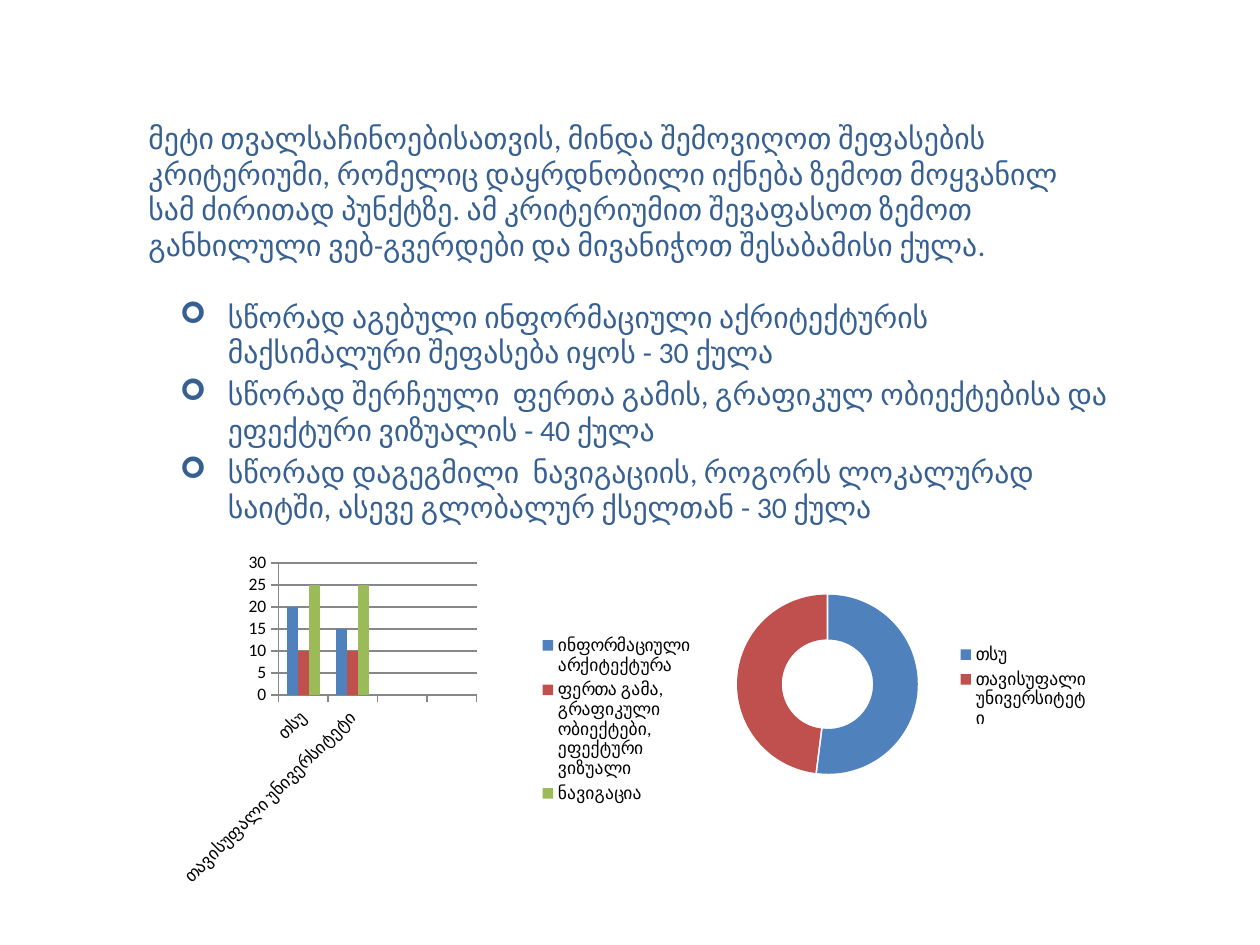
from lxml import etree
from pptx import Presentation
from pptx.chart.data import CategoryChartData
from pptx.dml.color import RGBColor
from pptx.enum.chart import XL_CHART_TYPE, XL_LEGEND_POSITION, XL_TICK_MARK
from pptx.oxml import parse_xml
from pptx.oxml.ns import nsdecls, qn
from pptx.util import Inches, Pt

COLUMN = XL_CHART_TYPE.COLUMN_CLUSTERED
DOUGHNUT = XL_CHART_TYPE.DOUGHNUT
RIGHT = XL_LEGEND_POSITION.RIGHT
OUTSIDE = XL_TICK_MARK.OUTSIDE

FONT = "Calibri"
TEXT = "376092"
AXIS = "878787"
BLUE, RED, GREEN = "4F81BD", "C0504D", "9BBB59"

INTRO = ["მეტი თვალსაჩინოებისათვის, მინდა შემოვიღოთ შეფასების კრიტერიუმი, რომელიც დაყრდნობილი იქნება ზემოთ მოყვანილ სამ ძირითად პუნქტზე. ამ კრიტერიუმით შევაფასოთ ზემოთ განხილული ვებ-გვერდები და მივანიჭოთ შესაბამისი ქულა."]
CRITERIA = [
    "სწორად აგებული ინფორმაციული აქრიტექტურის მაქსიმალური შეფასება იყოს - 30 ქულა",
    "სწორად შერჩეული  ფერთა გამის, გრაფიკულ ობიექტებისა და ეფექტური ვიზუალის - 40 ქულა",
    "სწორად დაგეგმილი  ნავიგაციის, როგორს ლოკალურად საიტში, ასევე გლობალურ ქსელთან - 30 ქულა",
]
UNIVERSITIES = ["თსუ", "თავისუფალი უნივერსიტეტი"]
SCORES = [
    ("ინფორმაციული არქიტექტურა", [20, 15], BLUE),
    ("ფერთა გამა, გრაფიკული ობიექტები, ეფექტური ვიზუალი", [10, 10], RED),
    ("ნავიგაცია", [25, 25], GREEN),
]


def rgb(value):
    return RGBColor.from_string(value)


def set_bullet(p, char, indent):
    pPr = p._p.get_or_add_pPr()
    pPr.set("marL", str(indent))
    pPr.set("indent", str(-indent))
    etree.SubElement(pPr, qn("a:buFont")).set("typeface", "Wingdings")
    etree.SubElement(pPr, qn("a:buChar")).set("char", char)


def add_text(slide, box, paragraphs, bullet=None):
    tf = slide.shapes.add_textbox(*map(Inches, box)).text_frame
    tf.word_wrap = True
    for i, text in enumerate(paragraphs):
        p = tf.paragraphs[0] if i == 0 else tf.add_paragraph()
        p.text = text
        if bullet:
            set_bullet(p, bullet, Inches(0.38))
        p.space_before = Pt(3.4 if i else 0)
        f = p.runs[0].font
        f.name, f.size = FONT, Pt(17)
        f.color.rgb = rgb(TEXT)


def set_plot_layout(chart, layout):
    area = chart._chartSpace.chart.plotArea
    for old in area.findall(qn("c:layout")):
        area.remove(old)
    sizes = "".join(f'<c:{k} val="{v}"/>' for k, v in zip("xywh", layout))
    area.insert(0, parse_xml(
        f'<c:layout {nsdecls("c")}><c:manualLayout><c:layoutTarget val="inner"/>'
        f'<c:xMode val="edge"/><c:yMode val="edge"/>{sizes}'
        "</c:manualLayout></c:layout>"))


def add_chart(slide, kind, box, data, layout):
    chart = slide.shapes.add_chart(kind, *map(Inches, box), data).chart
    chart.has_title = False
    chart.font.name, chart.font.size = FONT, Pt(10)
    chart.font.color.rgb = rgb("000000")
    chart.has_legend = True
    chart.legend.position = RIGHT
    chart.legend.include_in_layout = False
    set_plot_layout(chart, layout)
    return chart


def add_score_chart(slide, box):
    data = CategoryChartData()
    data.categories = UNIVERSITIES + ["", ""]
    for name, values, _ in SCORES:
        data.add_series(name, values + [None, None])
    chart = add_chart(slide, COLUMN, box, data, (0.2, 0.05, 0.37, 0.38))
    plot = chart.plots[0]
    plot.vary_by_categories = False
    plot.gap_width, plot.overlap = 150, 0
    for s, (_, _, color) in zip(plot.series, SCORES):
        s.format.fill.solid()
        s.format.fill.fore_color.rgb = rgb(color)
    for axis in (chart.category_axis, chart.value_axis):
        axis.major_tick_mark = OUTSIDE
        axis.format.line.color.rgb = rgb(AXIS)
    chart.category_axis.tick_labels.font.size = Pt(10)
    body = chart.category_axis._element.find(qn("c:txPr")).find(qn("a:bodyPr"))
    body.set("rot", "-2700000")
    values = chart.value_axis
    values.minimum_scale, values.maximum_scale, values.major_unit = 0, 30, 5
    values.has_major_gridlines = True
    values.major_gridlines.format.line.color.rgb = rgb(AXIS)


def add_share_chart(slide, box):
    data = CategoryChartData()
    data.categories = UNIVERSITIES
    data.add_series("Series 1", [52, 48])
    chart = add_chart(slide, DOUGHNUT, box, data, (0.03, 0.07, 0.48, 0.84))
    plot = chart.plots[0]
    plot.vary_by_categories = True
    plot._element.find(qn("c:holeSize")).set("val", "50")
    s = plot.series[0]
    s._element.find(qn("c:tx")).addnext(
        parse_xml(f'<c:explosion {nsdecls("c")} val="2"/>'))
    for i, color in enumerate((BLUE, RED)):
        fill = s.points[i].format.fill
        fill.solid()
        fill.fore_color.rgb = rgb(color)


def main():
    prs = Presentation()
    prs.slide_width, prs.slide_height = Inches(10), Inches(7.5)
    slide = prs.slides.add_slide(prs.slide_layouts[6])
    add_text(slide, (1.33, 2.32, 7.67, 2.33), CRITERIA, "➢")
    add_text(slide, (1.08, 0.9, 7.67, 1.75), INTRO)
    add_score_chart(slide, (1.36, 4.33, 4.25, 2.76))
    add_share_chart(slide, (5.76, 4.5, 2.99, 1.9))
    prs.save("out.pptx")


if __name__ == "__main__":
    main()
